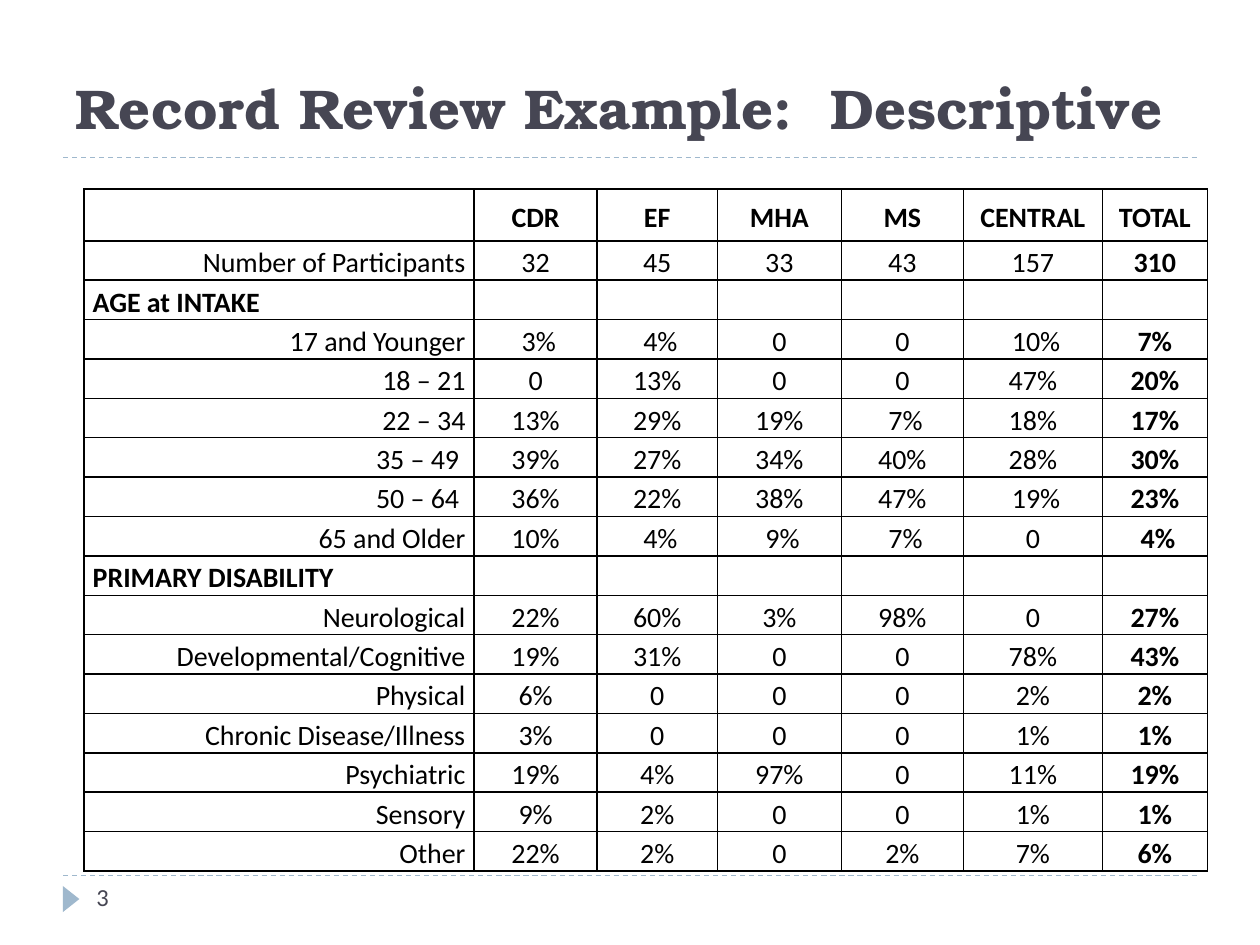
"""Build the record review slide with its table of participant descriptives."""
from typing import NamedTuple

from lxml import etree
from pptx import Presentation
from pptx.dml.color import RGBColor
from pptx.enum import dml, shapes, text
from pptx.oxml import ns
from pptx.util import Pt

INK = "464653"
ACCENT = "9FB8CD"
BLACK = "000000"
COLUMN_WIDTHS = (223, 70.2, 68.8, 70.8, 69.8, 79.4, 60)
HEADER_HEIGHT, ROW_HEIGHT = 29.6, 22.1


class Record(NamedTuple):
    label: str
    values: tuple[str, ...] = ()


RECORDS = (
    Record("", ("CDR", "EF", "MHA", "MS", "CENTRAL", "TOTAL")),
    Record("Number of Participants", ("32", "45", "33", "43", "157", "310")),
    Record("AGE at INTAKE"),
    Record("17 and Younger", (" 3%", " 4%", "0", "0", " 10%", "7%")),
    Record("18 – 21", ("0", "13%", "0", "0", "47%", "20%")),
    Record("22 – 34", ("13%", "29%", "19%", " 7%", "18%", "17%")),
    Record("35 – 49 ", ("39%", "27%", "34%", "40%", "28%", "30%")),
    Record("50 – 64 ", ("36%", "22%", "38%", "47%", " 19%", "23%")),
    Record("65 and Older", ("10%", " 4%", " 9%", " 7%", "0", " 4%")),
    Record("PRIMARY DISABILITY"),
    Record("Neurological", ("22%", "60%", "3%", "98%", "0", "27%")),
    Record("Developmental/Cognitive", ("19%", "31%", "0", "0", "78%", "43%")),
    Record("Physical", ("6%", "0", "0", "0", "2%", "2%")),
    Record("Chronic Disease/Illness", ("3%", "0", "0", "0", "1%", "1%")),
    Record("Psychiatric", ("19%", "4%", "97%", "0", "11%", "19%")),
    Record("Sensory", ("9%", "2%", "0", "0", "1%", "1%")),
    Record("Other", ("22%", "2%", "0", "2%", "7%", "6%")),
)


def color(value: str) -> RGBColor:
    return RGBColor.from_string(value)


def add_run(paragraph, wording: str, size: float, font: str, ink: str, bold: bool = False) -> None:
    run = paragraph.add_run()
    run.text = wording
    run.font.size = Pt(size)
    run.font.name = font
    run.font.bold = bold
    run.font.color.rgb = color(ink)


def add_rule(slide, top: float) -> None:
    rule = slide.shapes.add_connector(
        shapes.MSO_CONNECTOR.STRAIGHT, Pt(36), Pt(top), Pt(684), Pt(top))
    rule.line.color.rgb = color(ACCENT)
    rule.line.width = Pt(0.75)
    rule.line.dash_style = dml.MSO_LINE.DASH
    etree.SubElement(rule.element.spPr, ns.qn("a:effectLst"))


def add_page_mark(slide) -> None:
    marker = slide.shapes.add_shape(
        shapes.MSO_SHAPE.ISOSCELES_TRIANGLE, Pt(33.1), Pt(509), Pt(15), Pt(9.5))
    marker.rotation = 90
    marker.shadow.inherit = False
    marker.fill.solid()
    marker.fill.fore_color.rgb = color(ACCENT)
    marker.line.fill.background()
    page_number = slide.shapes.add_textbox(Pt(48), Pt(500.4), Pt(156), Pt(28.8))
    page_number.text_frame.word_wrap = True
    add_run(page_number.text_frame.paragraphs[0], "3", 14, "Calibri", INK)


def add_title(slide) -> None:
    title = slide.shapes.title
    title.left, title.top, title.width, title.height = Pt(36), Pt(21.6), Pt(648), Pt(62.6)
    title.text_frame.vertical_anchor = text.MSO_ANCHOR.BOTTOM
    heading = title.text_frame.paragraphs[0]
    heading.alignment = text.PP_ALIGN.LEFT
    add_run(heading, "Record Review Example:  Descriptive", 32, "TeX Gyre Bonum", INK, True)


def border_cell(cell) -> None:
    properties = cell._tc.get_or_add_tcPr()
    for side in ("lnL", "lnR", "lnT", "lnB"):
        border = etree.SubElement(properties, ns.qn(f"a:{side}"), w=str(Pt(1)))
        fill = etree.SubElement(border, ns.qn("a:solidFill"))
        etree.SubElement(fill, ns.qn("a:srgbClr"), val=BLACK)


def fill_cell(cell, wording: str, alignment: text.PP_ALIGN, bold: bool) -> None:
    cell.margin_left = cell.margin_right = Pt(5)
    cell.margin_top = cell.margin_bottom = Pt(0)
    cell.vertical_anchor = text.MSO_ANCHOR.MIDDLE
    border_cell(cell)
    cell.fill.background()
    if wording:
        paragraph = cell.text_frame.paragraphs[0]
        paragraph.alignment = alignment
        paragraph.line_spacing = 1.15
        add_run(paragraph, wording, 16, "Calibri", BLACK, bold)


def add_record_table(slide) -> None:
    height = HEADER_HEIGHT + ROW_HEIGHT * (len(RECORDS) - 1)
    table = slide.shapes.add_table(
        len(RECORDS), len(COLUMN_WIDTHS),
        Pt(48), Pt(108), Pt(sum(COLUMN_WIDTHS)), Pt(height)).table
    table.first_row = table.horz_banding = False
    for column, width in zip(table.columns, COLUMN_WIDTHS):
        column.width = Pt(width)
    total_column = len(COLUMN_WIDTHS) - 1
    for row_index, record in enumerate(RECORDS):
        is_header = row_index == 0
        is_section = not record.values
        table.rows[row_index].height = Pt(HEADER_HEIGHT if is_header else ROW_HEIGHT)
        label_alignment = text.PP_ALIGN.LEFT if is_section else text.PP_ALIGN.RIGHT
        fill_cell(table.cell(row_index, 0), record.label, label_alignment, is_section)
        values = record.values or ("",) * total_column
        for column_index, value in enumerate(values, start=1):
            fill_cell(table.cell(row_index, column_index), value, text.PP_ALIGN.CENTER,
                      is_header or column_index == total_column)


def main() -> None:
    presentation = Presentation()
    presentation.slide_width, presentation.slide_height = Pt(720), Pt(540)
    slide = presentation.slides.add_slide(presentation.slide_layouts[5])
    for top in (500.4, 90):
        add_rule(slide, top)
    add_title(slide)
    add_record_table(slide)
    add_page_mark(slide)
    presentation.save("out.pptx")


if __name__ == "__main__":
    main()
